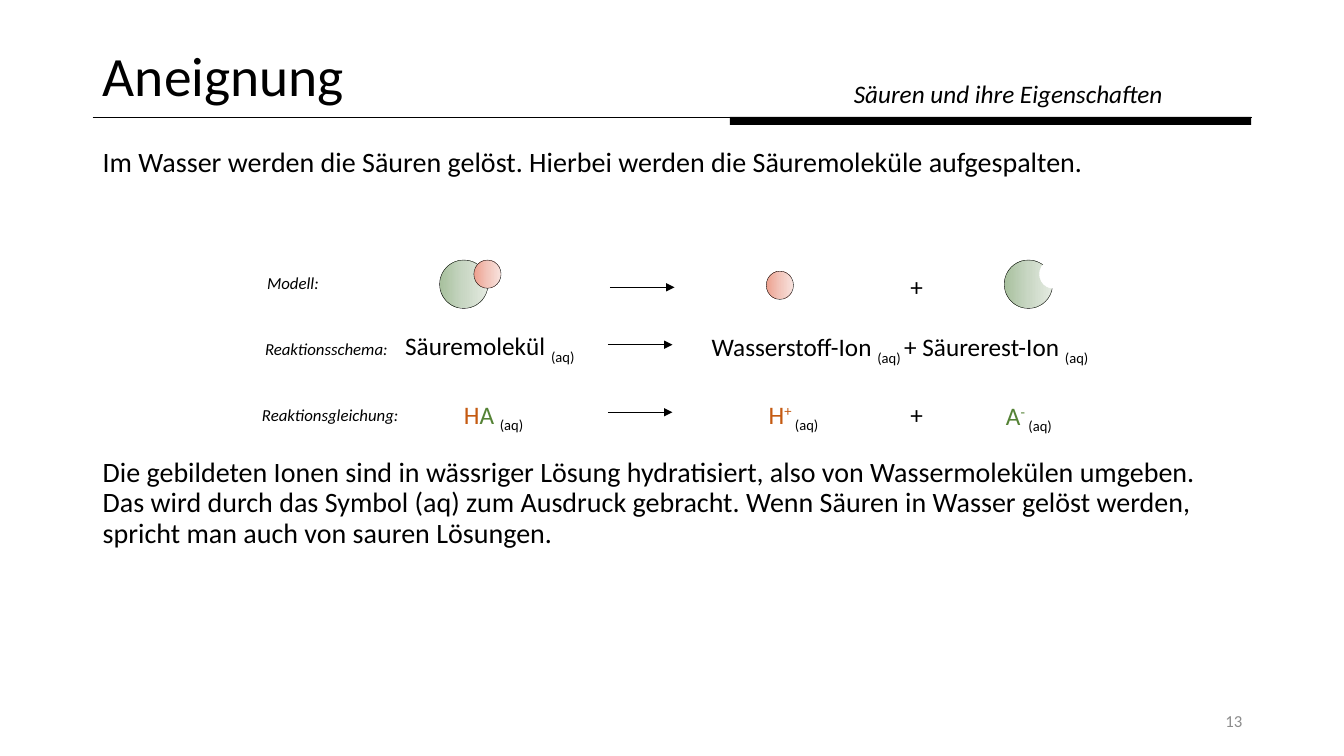
from copy import deepcopy
from dataclasses import dataclass

from lxml.etree import SubElement
from pptx import Presentation
from pptx.dml.color import RGBColor
from pptx.enum.shapes import MSO_CONNECTOR, MSO_SHAPE
from pptx.enum.text import MSO_ANCHOR as Anchor, PP_ALIGN as Align
from pptx.oxml.ns import qn
from pptx.shapes.autoshape import Shape
from pptx.slide import Slide
from pptx.text.text import TextFrame
from pptx.util import Pt

PX = 9144


@dataclass(frozen=True)
class Theme:
    font: str = "Calibri"
    black: str = "000000"
    white: str = "FFFFFF"
    grey: str = "8C8C8C"
    hydrogen: str = "C55A11"
    acid: str = "548235"
    red_ball: tuple[str, ...] = ("EDA08E", "F2C5BB", "F8E3DE")
    green_ball: tuple[str, ...] = ("A7C09D", "C9D7C4", "E5EBE2")
    title: float = 39.6
    body: float = 20
    formula: float = 18
    small: float = 12


THEME = Theme()


@dataclass(frozen=True)
class Span:
    text: str
    color: str = THEME.black
    baseline: int = 0


@dataclass(frozen=True)
class Label:
    left: int
    top: int
    width: int
    height: int
    spans: tuple[Span, ...]
    size: float = THEME.formula
    align: Align = Align.LEFT
    italic: bool = False
    anchor: Anchor = Anchor.TOP


@dataclass(frozen=True)
class Ball:
    left: int
    top: int
    width: int
    height: int
    colors: tuple[str, ...]
    outline: str = THEME.black


@dataclass(frozen=True)
class Line:
    left: int
    right: int
    y: int
    arrow: bool = True


AQ = Span("(aq)", baseline=-25)
PLUS = (Span("+"),)
HA = (Span("H", THEME.hydrogen), Span("A ", THEME.acid), AQ)
H_ION = (Span("H", THEME.hydrogen), Span("+ ", THEME.hydrogen, 30), AQ)
A_ION = (Span("A", THEME.acid), Span("- ", THEME.acid, 30), AQ)
IONS = (
    Span("Wasserstoff-Ion "),
    Span("(aq) ", baseline=-25),
    Span("+ Säurerest-Ion "),
    AQ,
)

LABELS = (
    Label(255, 266, 152, 30, (Span("Modell:"),), THEME.small, italic=True),
    Label(253, 331, 152, 30, (Span("Reaktionsschema:"),), THEME.small, italic=True),
    Label(250, 397, 162, 30, (Span("Reaktionsgleichung:"),), THEME.small, italic=True),
    Label(893, 264, 31, 40, PLUS),
    Label(392, 323, 195, 40, (Span("Säuremolekül "), AQ)),
    Label(696, 324, 455, 40, IONS),
    Label(392, 391, 195, 40, HA, align=Align.CENTER),
    Label(682, 391, 210, 40, H_ION, align=Align.CENTER),
    Label(893, 391, 31, 40, PLUS),
    Label(923, 392, 195, 40, A_ION, align=Align.CENTER),
    Label(942, 695, 300, 40, (Span("13", THEME.grey),), THEME.small,
          Align.RIGHT, anchor=Anchor.MIDDLE),
    Label(837, 73, 438, 40, (Span("Säuren und ihre Eigenschaften"),), italic=True),
)

BALLS = (
    Ball(436, 258, 48, 48, THEME.green_ball),
    Ball(470, 258, 27, 28, THEME.red_ball),
    Ball(760, 269, 27, 28, THEME.red_ball),
    Ball(996, 258, 48, 48, THEME.green_ball),
    Ball(1031, 258, 27, 28, (THEME.white,), THEME.white),
)

LINES = (
    Line(92, 1242, 116, arrow=False),
    Line(605, 669, 285),
    Line(603, 667, 342),
    Line(603, 667, 409),
)

BODY = (
    "Im Wasser werden die Säuren gelöst. Hierbei werden die Säuremoleküle aufgespalten.",
    "Die gebildeten Ionen sind in wässriger Lösung hydratisiert, also von "
    "Wassermolekülen umgeben. Das wird durch das Symbol (aq) zum Ausdruck gebracht. "
    "Wenn Säuren in Wasser gelöst werden, spricht man auch von sauren Lösungen.",
)
BODY_GAP = 200


def rgb(color: str) -> RGBColor:
    return RGBColor.from_string(color)


def write(frame: TextFrame, index: int, spans: tuple[Span, ...], size: float,
          align: Align = Align.LEFT, italic: bool = False,
          spacing: float = 1.0, before: float = 0) -> None:
    para = frame.add_paragraph() if index else frame.paragraphs[0]
    para.alignment = align
    para.line_spacing = spacing
    para.space_before = Pt(before)
    for span in spans:
        run = para.add_run()
        run.text = span.text
        run.font.name = THEME.font
        run.font.size = Pt(size)
        run.font.italic = italic
        run.font.color.rgb = rgb(span.color)
        if span.baseline:
            run._r.get_or_add_rPr().set("baseline", str(span.baseline * 1000))


def add_box(page: Slide, left: int, top: int, width: int, height: int) -> TextFrame:
    box = page.shapes.add_textbox(left * PX, top * PX, width * PX, height * PX)
    box.text_frame.word_wrap = True
    return box.text_frame


def add_label(page: Slide, label: Label) -> None:
    frame = add_box(page, label.left, label.top, label.width, label.height)
    frame.vertical_anchor = label.anchor
    write(frame, 0, label.spans, label.size, label.align, label.italic)


def paint(shape: Shape, colors: tuple[str, ...]) -> None:
    shape.shadow.inherit = False
    if len(colors) == 1:
        shape.fill.solid()
        shape.fill.fore_color.rgb = rgb(colors[0])
        return
    shape.fill.gradient()
    shape.fill.gradient_angle = 0
    stops = shape._element.spPr.find(f".//{qn('a:gsLst')}")
    stops.insert(1, deepcopy(stops[0]))
    for index, (stop, color) in enumerate(zip(shape.fill.gradient_stops, colors)):
        stop.position = index / (len(colors) - 1)
        stop.color.rgb = rgb(color)


def add_ball(page: Slide, ball: Ball) -> None:
    shape = page.shapes.add_shape(MSO_SHAPE.OVAL, ball.left * PX, ball.top * PX,
                                  ball.width * PX, ball.height * PX)
    paint(shape, ball.colors)
    shape.line.color.rgb = rgb(ball.outline)
    shape.line.width = Pt(0.25)


def add_line(page: Slide, line: Line) -> None:
    connector = page.shapes.add_connector(MSO_CONNECTOR.STRAIGHT, line.left * PX,
                                          line.y * PX, line.right * PX, line.y * PX)
    connector.line.color.rgb = rgb(THEME.black)
    connector.line.width = Pt(0.5)
    if line.arrow:
        SubElement(connector.line._get_or_add_ln(), qn("a:tailEnd"), type="triangle")
    SubElement(connector._element.spPr, qn("a:effectLst"))


def add_heading(page: Slide) -> None:
    title = page.shapes.title
    title.left, title.top = 92 * PX, 40 * PX
    title.width, title.height = 1150 * PX, 76 * PX
    title.text_frame.vertical_anchor = Anchor.MIDDLE
    write(title.text_frame, 0, (Span("Aneignung"),), THEME.title, spacing=0.9)
    bar = page.shapes.add_shape(MSO_SHAPE.RECTANGLE, 724 * PX, 116 * PX,
                                517 * PX, 8 * PX)
    paint(bar, (THEME.black,))
    bar.line.fill.background()


def add_body(page: Slide) -> None:
    frame = add_box(page, 92, 142, 1150, 533)
    for index, text in enumerate(BODY):
        write(frame, index, (Span(text),), THEME.body, spacing=0.9,
              before=index * BODY_GAP)


def main() -> None:
    deck = Presentation()
    deck.slide_width, deck.slide_height = 1333 * PX, 750 * PX
    page = deck.slides.add_slide(deck.slide_layouts[5])
    add_heading(page)
    add_body(page)
    for ball in BALLS:
        add_ball(page, ball)
    for line in LINES:
        add_line(page, line)
    for label in LABELS:
        add_label(page, label)
    deck.save("out.pptx")


if __name__ == "__main__":
    main()
